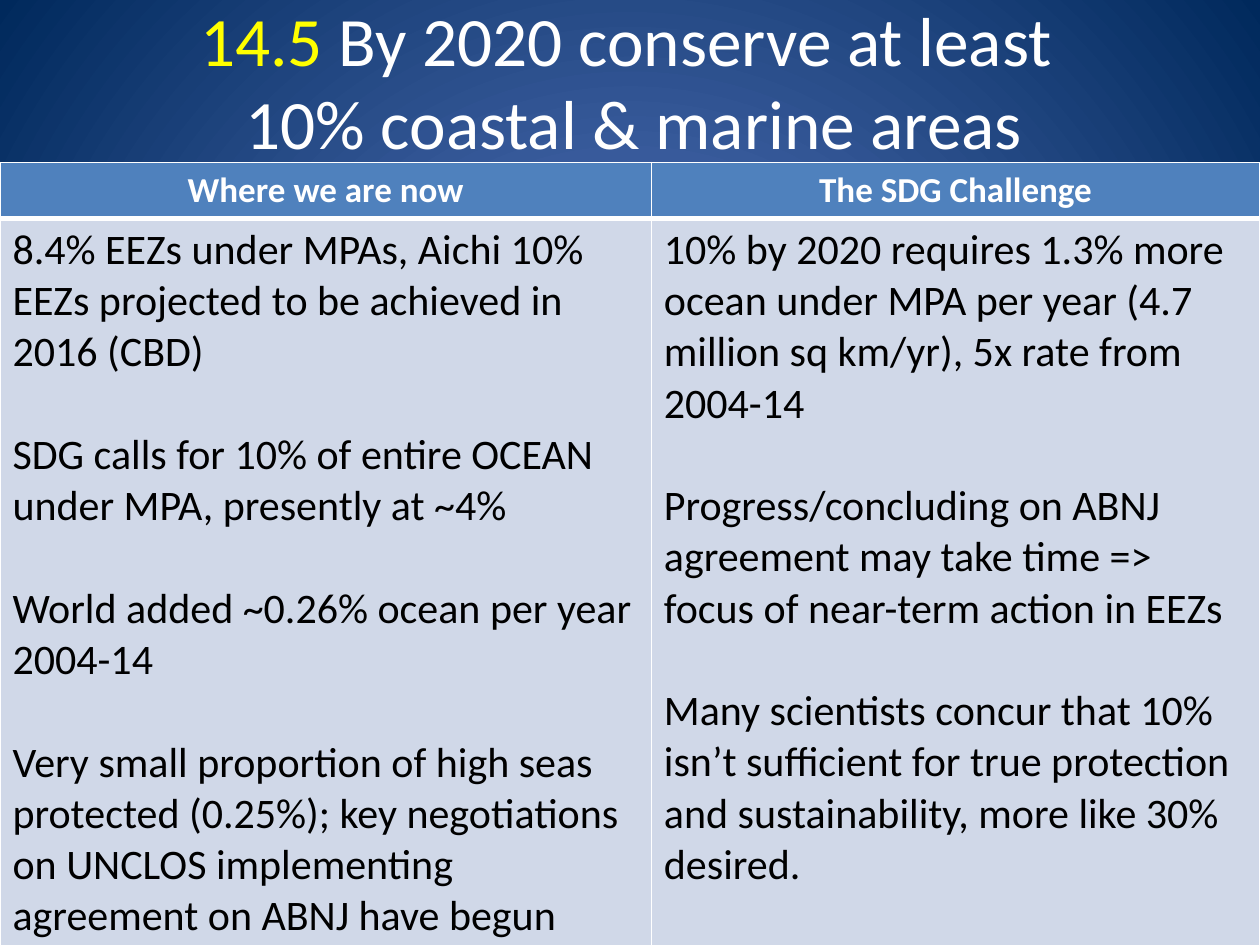
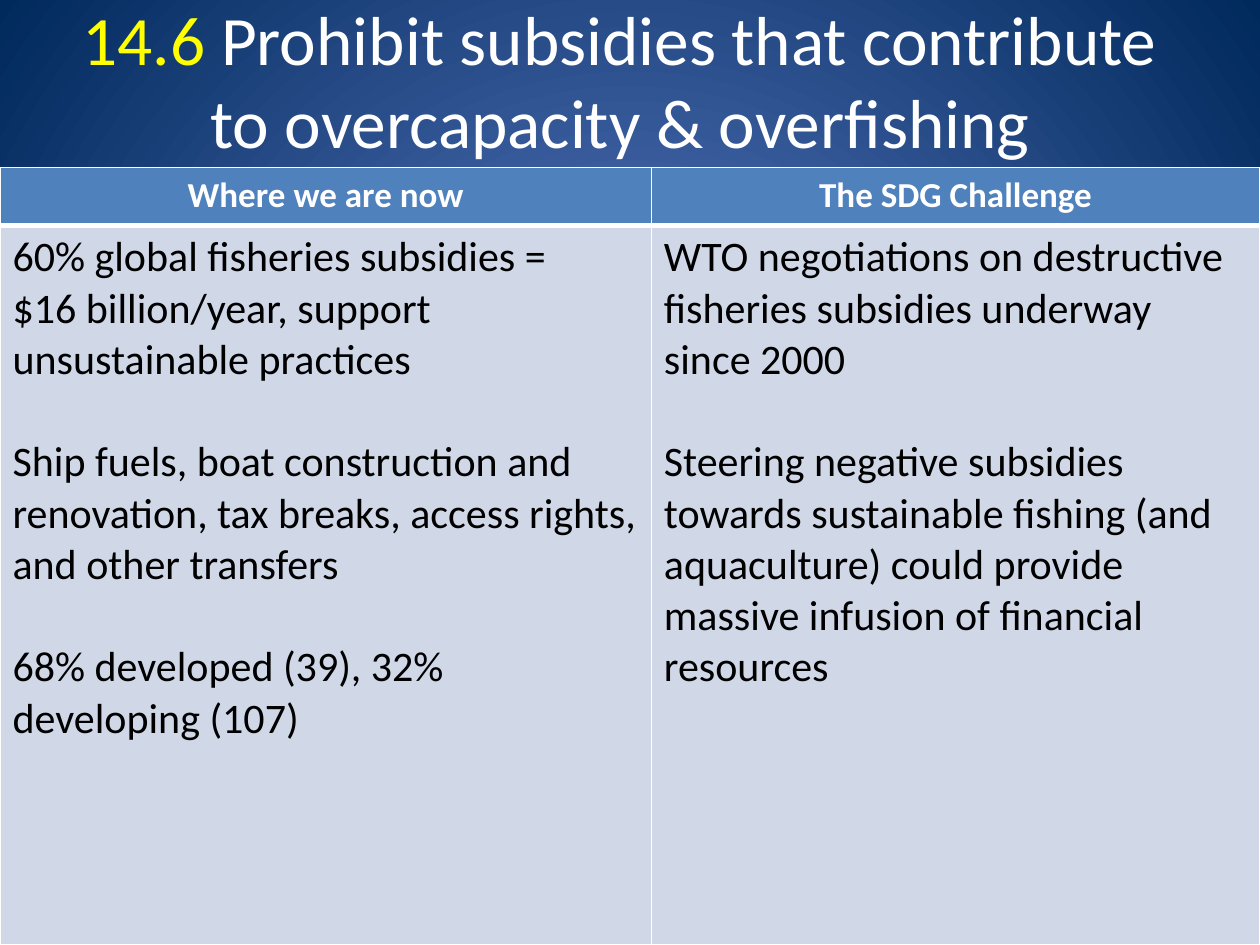
from lxml import etree
from pptx import Presentation
from pptx.dml.color import RGBColor
from pptx.enum.text import MSO_ANCHOR, MSO_AUTO_SIZE, PP_ALIGN
from pptx.oxml.ns import qn
from pptx.util import Cm, Pt

CENTER, LEFT = PP_ALIGN.CENTER, PP_ALIGN.LEFT
MIDDLE = MSO_ANCHOR.MIDDLE
NO_AUTOFIT = MSO_AUTO_SIZE.NONE

FONT = "Calibri"
WHITE, BLACK, YELLOW = "FFFFFF", "000000", "FFFF00"
HEADER_BLUE, BODY_BLUE = "4F81BD", "D0D8E8"
GLOW_BLUE, EDGE_BLUE = "5E7CC5", "00295C"

TITLE_LAYOUT = 5
SLIDE_WIDTH, SLIDE_HEIGHT = Cm(25.4), Cm(19.05)
TITLE_WIDTH, TITLE_HEIGHT = Cm(22.86), Cm(3.18)
NOW_WIDTH = Cm(13.13)
TITLE_SIZE, HEADER_SIZE, BODY_SIZE = Pt(39.6), Pt(20), Pt(24)
STATEMENT_GAP = Pt(29.3)  # one line of body text
THIN, THICK = 1, 3

HEADERS = ("Where we are now", "The SDG Challenge")

# Each statement is set apart by a gap; a newline inside one starts a paragraph without a gap.
TARGETS = [
    {
        "number": "14.5",
        "title": " By 2020 conserve at least \v10% coastal & marine areas",
        "title_at": (Cm(1.35), Cm(0.03)),
        "table_top": Cm(3.28),
        "row_heights": (Cm(1.12), Cm(14.63)),
        "now": [
            "8.4% EEZs under MPAs, Aichi 10% EEZs projected to be achieved in 2016 (CBD)",
            "SDG calls for 10% of entire OCEAN under MPA, presently at ~4%",
            "World added ~0.26% ocean per year 2004-14",
            "Very small proportion of high seas protected (0.25%); key negotiations "
            "on UNCLOS implementing agreement on ABNJ have begun",
        ],
        "challenge": [
            "10% by 2020 requires 1.3% more ocean under MPA per year "
            "(4.7 million sq km/yr), 5x rate from 2004-14",
            "Progress/concluding on ABNJ agreement may take time => "
            "focus of near-term action in EEZs",
            "Many scientists concur that 10% isn’t sufficient for true protection "
            "and sustainability, more like 30% desired.",
        ],
    },
    {
        "number": "14.6",
        "title": " Prohibit subsidies that contribute to overcapacity & overfishing",
        "title_at": (Cm(1.07), Cm(0)),
        "table_top": Cm(3.38),
        "row_heights": (Cm(1.17), Cm(14.5)),
        "now": [
            "60% global fisheries subsidies =\n"
            "$16 billion/year, support unsustainable practices",
            "Ship fuels, boat construction and renovation, tax breaks, "
            "access rights, and other transfers",
            "68% developed (39), 32% developing (107)",
        ],
        "challenge": [
            "WTO negotiations on destructive fisheries subsidies underway since 2000",
            "Steering negative subsidies towards sustainable fishing (and aquaculture) "
            "could provide massive infusion of financial resources",
        ],
    },
]


def color(hex_string):
    return RGBColor.from_string(hex_string)


def style_font(font, size, hex_string, bold=False):
    font.name, font.size, font.bold = FONT, size, bold
    font.color.rgb = color(hex_string)


def paint_background(master):
    """Give every slide a circular gradient that is brightest in the middle."""
    fill = master.background.fill
    fill.gradient()
    for stop, hex_string in zip(fill.gradient_stops, (GLOW_BLUE, EDGE_BLUE)):
        stop.color.rgb = color(hex_string)
    gradient = next(master.element.iter(qn("a:gradFill")))
    gradient.remove(gradient.find(qn("a:lin")))
    circle = etree.SubElement(gradient, qn("a:path"), path="circle")
    etree.SubElement(circle, qn("a:fillToRect"), l="50000", t="50000", r="50000", b="50000")


def set_borders(cell, top, bottom):
    """Draw white borders; the widths are in points and the sides are thin."""
    properties = cell._tc.get_or_add_tcPr()
    for side, width in (("L", THIN), ("R", THIN), ("T", top), ("B", bottom)):
        line = etree.SubElement(properties, qn(f"a:ln{side}"), w=str(Pt(width)))
        fill = etree.SubElement(line, qn("a:solidFill"))
        etree.SubElement(fill, qn("a:srgbClr"), val=WHITE)


def fill_cell(cell, statements, background, alignment, size, text_color, bold=False):
    cell.fill.solid()
    cell.fill.fore_color.rgb = color(background)
    cell.text = "\n".join(statements)
    paragraphs = iter(cell.text_frame.paragraphs)
    for index, statement in enumerate(statements):
        for part in range(len(statement.split("\n"))):
            paragraph = next(paragraphs)
            paragraph.alignment = alignment
            style_font(paragraph.font, size, text_color, bold)
            if index and part == 0:
                paragraph.space_before = STATEMENT_GAP


def add_title(slide, target):
    title = slide.shapes.title
    title.left, title.top = target["title_at"]
    title.width, title.height = TITLE_WIDTH, TITLE_HEIGHT
    frame = title.text_frame
    frame.auto_size, frame.vertical_anchor = NO_AUTOFIT, MIDDLE
    frame.text = target["number"] + target["title"]
    paragraph = frame.paragraphs[0]
    paragraph.text = ""
    paragraph.alignment = CENTER
    number = paragraph.add_run()
    number.text = target["number"]
    style_font(number.font, TITLE_SIZE, YELLOW)
    for index, line in enumerate(target["title"].split("\v")):
        if index:
            paragraph.add_line_break()
        run = paragraph.add_run()
        run.text = line
        style_font(run.font, TITLE_SIZE, WHITE)


def add_comparison(slide, target):
    heights = target["row_heights"]
    table = slide.shapes.add_table(
        2, 2, 0, target["table_top"], SLIDE_WIDTH, sum(heights)
    ).table
    for row, height in zip(table.rows, heights):
        row.height = height
    for column, width in zip(table.columns, (NOW_WIDTH, SLIDE_WIDTH - NOW_WIDTH)):
        column.width = width
    for index, (header, key) in enumerate(zip(HEADERS, ("now", "challenge"))):
        header_cell, body_cell = table.cell(0, index), table.cell(1, index)
        set_borders(header_cell, THIN, THICK)
        set_borders(body_cell, THICK, THIN)
        fill_cell(header_cell, [header], HEADER_BLUE, CENTER, HEADER_SIZE, WHITE, bold=True)
        fill_cell(body_cell, target[key], BODY_BLUE, LEFT, BODY_SIZE, BLACK)


def main():
    presentation = Presentation()
    presentation.slide_width, presentation.slide_height = SLIDE_WIDTH, SLIDE_HEIGHT
    paint_background(presentation.slide_master)
    for target in TARGETS:
        slide = presentation.slides.add_slide(presentation.slide_layouts[TITLE_LAYOUT])
        add_title(slide, target)
        add_comparison(slide, target)
    presentation.save("out.pptx")


if __name__ == "__main__":
    main()
